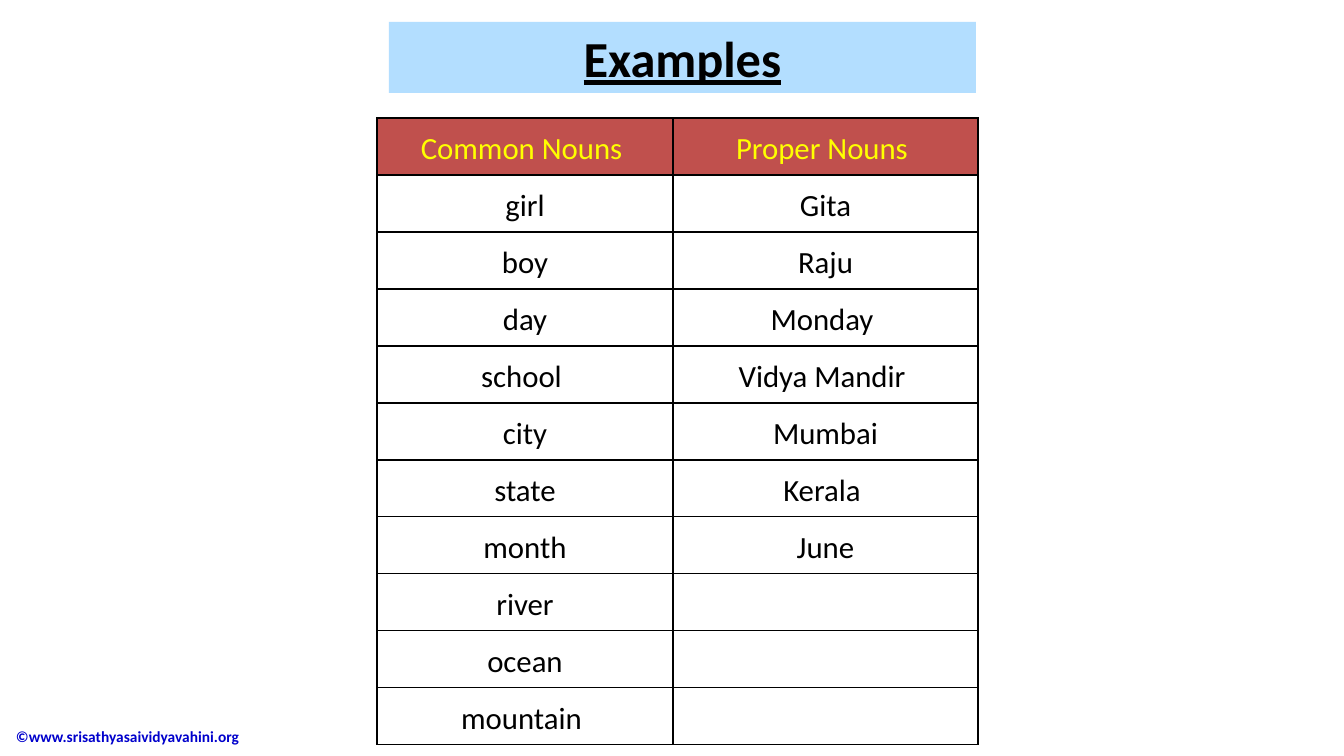
from lxml.etree import SubElement
from pptx import Presentation
from pptx.dml.color import RGBColor
from pptx.enum.text import MSO_ANCHOR as Anchor, MSO_AUTO_SIZE as AutoSize, PP_ALIGN as Align
from pptx.oxml.ns import qn
from pptx.util import Emu, Pt

EMU_PER_INCH = 914400
PX_PER_INCH = 100.8
NOUN_PAIRS = [
    ("Common Nouns ", "Proper Nouns "),
    ("girl", "Gita"),
    ("boy", "Raju"),
    ("day", "Monday "),
    ("school ", "Vidya Mandir "),
    ("city", "Mumbai"),
    ("state", "Kerala "),
    ("month", "June"),
    ("river", ""),
    ("ocean", ""),
    ("mountain ", ""),
]


def px(length):
    """Turn whole pixels into EMU."""
    return Emu(round(length * EMU_PER_INCH / PX_PER_INCH))


def color(hex_code):
    """Turn a hex string into a colour."""
    return RGBColor.from_string(hex_code)


class NounSlide:
    """Holds the style and the current slide."""

    FONT = "Calibri"
    BLACK = "000000"

    def __init__(self, deck):
        """Add a title-only slide to the deck."""
        self.slide = deck.slides.add_slide(deck.slide_layouts[5])

    def add_words(self, paragraph, wording, size, ink, bold=False, underline=False):
        """Add one styled run to a paragraph."""
        run = paragraph.add_run()
        run.text = wording
        font = run.font
        font.name, font.size = self.FONT, Pt(size)
        font.bold, font.underline = bold, underline
        font.color.rgb = color(ink)

    def title(self, wording, left, top, width, height, fill):
        """Move, fill and word the title placeholder."""
        heading = self.slide.shapes.title
        heading.left, heading.top = px(left), px(top)
        heading.width, heading.height = px(width), px(height)
        heading.fill.solid()
        heading.fill.fore_color.rgb = color(fill)
        frame = heading.text_frame
        frame.auto_size = AutoSize.NONE
        frame.vertical_anchor = Anchor.MIDDLE
        frame.paragraphs[0].alignment = Align.CENTER
        self.add_words(frame.paragraphs[0], wording, 36, self.BLACK, bold=True, underline=True)

    def credit(self, wording, left, top, width, height, ink):
        """Add the small credit line."""
        frame = self.slide.shapes.add_textbox(px(left), px(top), px(width), px(height)).text_frame
        frame.word_wrap = True
        frame.vertical_anchor = Anchor.MIDDLE
        self.add_words(frame.paragraphs[0], wording, 11, ink, bold=True)

    def border(self, cell):
        """Draw a thin line on all four sides of a cell."""
        properties = cell._tc.get_or_add_tcPr()
        for side in ("a:lnL", "a:lnR", "a:lnT", "a:lnB"):
            line = SubElement(properties, qn(side), w=str(Pt(1)))
            SubElement(SubElement(line, qn("a:solidFill")), qn("a:srgbClr"), val=self.BLACK)

    def table(self, rows, left, top, column_widths, row_height, header_fill, header_ink):
        """Add a bordered table with a coloured header row."""
        grid = self.slide.shapes.add_table(
            len(rows), len(column_widths), px(left), px(top),
            px(sum(column_widths)), px(row_height * len(rows))).table
        grid.horz_banding = False
        for column, width in zip(grid.columns, column_widths):
            column.width = px(width)
        for row_index, row in enumerate(rows):
            for column_index, noun in enumerate(row):
                cell = grid.cell(row_index, column_index)
                cell.margin_left = cell.margin_right = px(7)
                cell.margin_top = cell.margin_bottom = px(7)
                self.border(cell)
                if row_index == 0:
                    cell.fill.solid()
                    cell.fill.fore_color.rgb = color(header_fill)
                else:
                    cell.fill.background()
                paragraph = cell.text_frame.paragraphs[0]
                paragraph.alignment = Align.CENTER
                paragraph.line_spacing = 1.15
                if noun:
                    self.add_words(paragraph, noun, 22, self.BLACK if row_index else header_ink)


def main():
    """Build and save the slide."""
    deck = Presentation()
    deck.slide_width, deck.slide_height = px(1344), px(756)
    examples = NounSlide(deck)
    examples.credit("©www.srisathyasaividyavahini.org", 6, 716, 356, 40, "0000CC")
    examples.title("Examples", 389, 22, 587, 71, "B3DEFF")
    examples.table(NOUN_PAIRS, 377, 118, (296, 305), 57, "C0504D", "FFFF00")
    deck.save("out.pptx")


if __name__ == "__main__":
    main()
